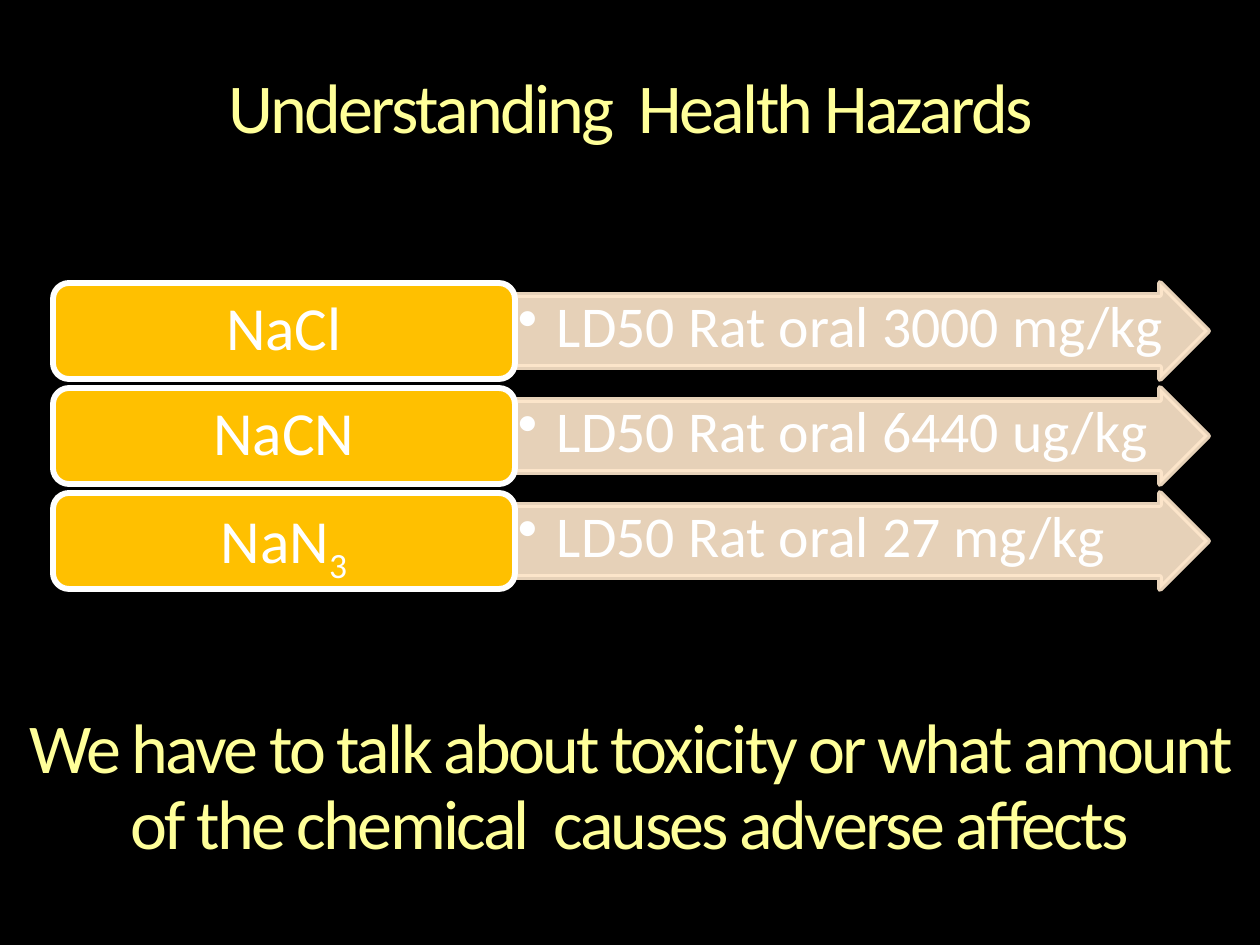
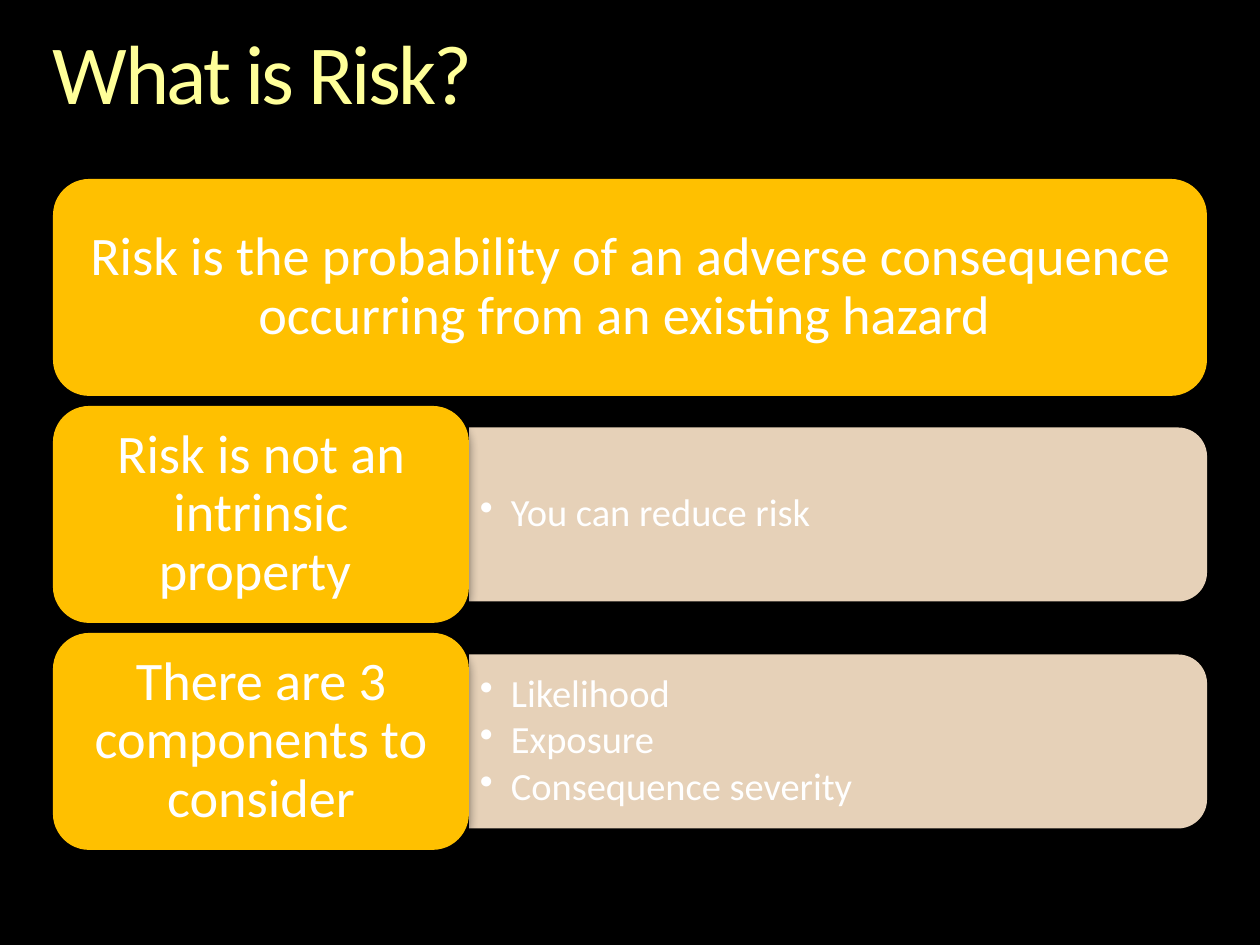
from lxml.etree import SubElement
from pptx import Presentation
from pptx.dml.color import RGBColor
from pptx.enum.shapes import MSO_SHAPE as Preset
from pptx.enum.text import MSO_ANCHOR as Anchor, MSO_AUTO_SIZE as AutoSize, PP_ALIGN as Align
from pptx.oxml.ns import qn
from pptx.util import Emu, Pt

COLOURS = {"background": "000000", "title": "FFFF99", "label": "FFC000",
           "detail": "FFE8CC", "text": "FFFFFF", "shadow": "000000"}
FONT = "Calibri"
SCALE = 914400 / 126
PAGE_SIZE = (1260, 945)
MARGIN = 53


def px(length):
    """Turn pixels into EMU."""
    return Emu(round(length * SCALE))


def rgb(name):
    """Look up a colour by its role."""
    return RGBColor.from_string(COLOURS[name])


def add_page(deck):
    """Add a blank slide with the dark background."""
    page = deck.slides.add_slide(deck.slide_layouts[6])
    page.background.fill.solid()
    page.background.fill.fore_color.rgb = rgb("background")
    return page


def set_frame(shape, insets, anchor):
    """Set wrapping, insets and anchor, and return the text frame."""
    frame = shape.text_frame
    frame.word_wrap = True
    frame.auto_size = AutoSize.NONE
    frame.vertical_anchor = anchor
    frame.margin_left = frame.margin_right = px(insets[0])
    frame.margin_top = frame.margin_bottom = px(insets[1])
    return frame


def add_span(para, text, size, colour="text"):
    """Add one styled run to a paragraph."""
    span = para.add_run()
    span.text = text
    span.font.name = FONT
    span.font.size = Pt(size)
    span.font.color.rgb = rgb(colour)
    return span


def add_title(page, box, text, size, align=Align.CENTER):
    """Write a tightly spaced yellow heading."""
    frame = set_frame(page.shapes.add_textbox(*map(px, box)), (0, 0), Anchor.TOP)
    para = frame.paragraphs[0]
    para.alignment = align
    para.line_spacing = 0.9
    span = add_span(para, text, size, "title")
    span.font._element.set("spc", "-150")


def add_bullets(shape, lines, size, indent, insets, anchor):
    """Fill a shape with bulleted lines."""
    frame = set_frame(shape, insets, anchor)
    for index, line in enumerate(lines):
        para = frame.paragraphs[0] if index == 0 else frame.add_paragraph()
        para.level = 1
        para.alignment = Align.LEFT
        para.line_spacing = 0.9
        para.space_after = Pt(3)
        properties = para._p.get_or_add_pPr()
        properties.set("marL", str(px(indent)))
        properties.set("indent", str(-px(indent)))
        SubElement(properties, qn("a:buChar"), char="•")
        add_span(para, line, size)


def add_panel(page, preset, box, colour, line=None, opacity=100):
    """Draw a filled preset shape with an optional outline."""
    shape = page.shapes.add_shape(preset, *map(px, box))
    shape.shadow.inherit = False
    shape.fill.solid()
    shape.fill.fore_color.rgb = rgb(colour)
    if line:
        shape.line.color.rgb = rgb(line)
        shape.line.width = Pt(3.35)
    else:
        shape.line.fill.background()
    if opacity < 100:
        for value in shape._element.spPr.iter(qn("a:srgbClr")):
            SubElement(value, qn("a:alpha"), val=str(opacity * 1000))
    return shape


def add_label(page, box, spans, size, insets, line=None):
    """Draw a rounded amber label; spans pair text with a subscript flag."""
    shape = add_panel(page, Preset.ROUNDED_RECTANGLE, box, "label", line)
    para = set_frame(shape, insets, Anchor.MIDDLE).paragraphs[0]
    para.alignment = Align.CENTER
    para.line_spacing = 0.9
    for text, subscript in spans:
        span = add_span(para, text, size)
        if subscript:
            span.font._element.set("baseline", "-25000")
    return shape


def add_soft_shadow(shape):
    """Give a shape a soft shadow straight below."""
    effects = shape._element.spPr.find(qn("a:effectLst"))
    shadow = SubElement(effects, qn("a:outerShdw"), blurRad=str(Pt(5.2)),
                        dist=str(Pt(3)), dir="5400000", rotWithShape="0")
    colour = SubElement(shadow, qn("a:srgbClr"), val=COLOURS["shadow"])
    SubElement(colour, qn("a:alpha"), val="40000")


def add_dose_row(page, box, chemical, dose):
    """Draw a chemical label with its dose arrow."""
    left, top, width, height = box
    label_width = width * 2 // 5
    arrow = add_panel(page, Preset.RIGHT_ARROW,
                      (left + label_width, top, width - label_width, height),
                      "detail", "detail", 90)
    arrow.adjustments[0] = 0.75
    arrow.adjustments[1] = 0.5
    add_bullets(arrow, [dose], 33, 39, (3, 3), Anchor.TOP)
    add_label(page, (left, top, label_width, height), chemical, 35, (19, 9), "text")


def add_risk_row(page, box, statement, details):
    """Draw a statement label, with a detail panel if there are details."""
    left, top, width, height = box
    label_width = 416 if details else width
    if details:
        panel_left, panel_width, panel_height = left + label_width, width - label_width, 174
        middle = top + height / 2
        panel = add_panel(page, Preset.ROUND_2_SAME_RECTANGLE,
                          (panel_left + (panel_width - panel_height) / 2,
                           middle - panel_width / 2, panel_height, panel_width),
                          "detail", opacity=90)
        panel.rotation = 90
        text_box = page.shapes.add_textbox(
            *map(px, (panel_left, middle - 78, panel_width - 8, 156)))
        add_bullets(text_box, details, 22, 31, (11, 6), Anchor.MIDDLE)
    label = add_label(page, (left, top, label_width, height), [(statement, False)], 31, (16, 8))
    add_soft_shadow(label)


def build_hazards(deck):
    """Build the slide that compares toxic doses."""
    page = add_page(deck)
    add_title(page, (MARGIN, 73, 1155, 77), "Understanding  Health Hazards", 40)
    doses = [([("NaCl", False)], "LD50 Rat oral 3000 mg/kg"),
             ([("NaCN", False)], "LD50 Rat oral 6440 ug/kg"),
             ([("NaN", False), ("3", True)], "LD50 Rat oral 27 mg/kg")]
    for row, (chemical, dose) in enumerate(doses):
        add_dose_row(page, (MARGIN, 283 + row * 105, 1155, 96), chemical, dose)
    add_title(page, (10, 713, 1239, 152), "We have to talk about toxicity or what amount "
              "of the chemical  causes adverse affects", 40)


def build_risk(deck):
    """Build the slide that defines risk."""
    page = add_page(deck)
    add_title(page, (MARGIN, 32, 1155, 92), "What is Risk?", 48, Align.LEFT)
    statements = [
        ("Risk is the probability of an adverse consequence "
         "occurring from an existing hazard ", []),
        ("Risk is not an intrinsic property ", ["You can reduce risk"]),
        ("There are 3 components to consider",
         ["Likelihood", "Exposure", "Consequence severity"])]
    for row, (statement, details) in enumerate(statements):
        add_risk_row(page, (MARGIN, 179 + row * 227, 1154, 217), statement, details)


def main():
    """Build and save the deck."""
    deck = Presentation()
    deck.slide_width, deck.slide_height = map(px, PAGE_SIZE)
    build_hazards(deck)
    build_risk(deck)
    deck.save("out.pptx")


if __name__ == "__main__":
    main()
